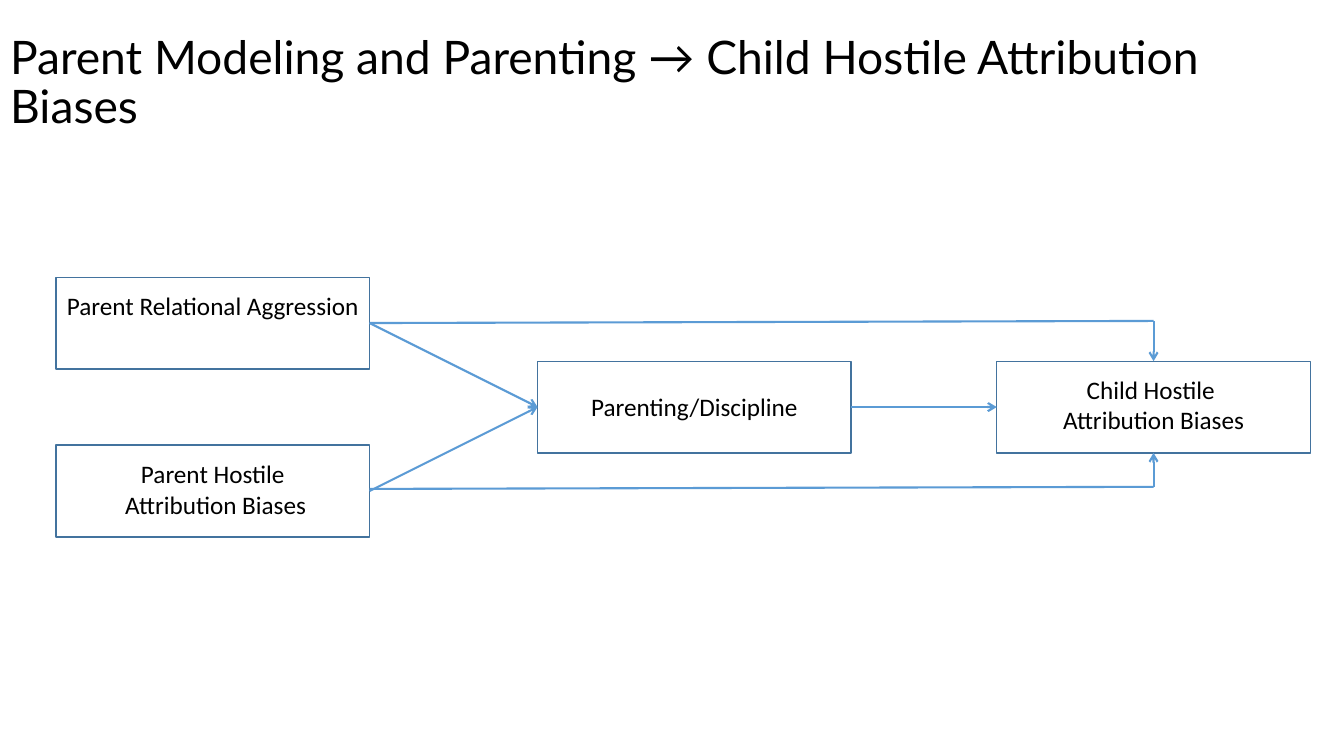
"""Build a path diagram linking parent traits to child attribution biases."""
from lxml import etree
from pptx import Presentation
from pptx.dml.color import RGBColor
from pptx.enum.shapes import MSO_CONNECTOR as Connector, MSO_SHAPE as Shape
from pptx.enum.text import MSO_ANCHOR as Anchor, MSO_AUTO_SIZE as AutoSize, PP_ALIGN as Align
from pptx.oxml.ns import qn
from pptx.util import Pt

TITLE = "Parent Modeling and Parenting → Child Hostile Attribution Biases"
BLACK, BORDER, ARROW = "000000", "43739E", "5B9BD5"
BOX_WIDTH, BOX_HEIGHT = 224, 65.5
LABEL_OVERHANG = 16

# name: (left, top, label offset from the top, label height, label lines)
BOXES = {
    "aggression": (40, 198, 6, 29, ["Parent Relational Aggression"]),
    "hostility": (40, 318, 6, 51, ["Parent Hostile", " Attribution Biases"]),
    "parenting": (384, 258, 18, 29, ["Parenting/Discipline"]),
    "child": (712, 258, 6, 51, ["Child Hostile ", "Attribution Biases"]),
}


def color(value):
    return RGBColor.from_string(value)


def style_text(frame, font, size, align):
    for para in frame.paragraphs:
        para.alignment = align
        for span in para.runs:
            span.font.name = font
            span.font.size = Pt(size)
            span.font.color.rgb = color(BLACK)


def add_title(page):
    title = page.shapes.title
    title.left, title.top, title.width, title.height = Pt(0), Pt(18), Pt(960), Pt(84)
    frame = title.text_frame
    frame.text = TITLE
    frame.word_wrap = True
    frame.auto_size = AutoSize.NONE
    frame.vertical_anchor = Anchor.MIDDLE
    frame.paragraphs[0].line_spacing = 0.9
    style_text(frame, "Lato", 33, Align.LEFT)


def add_box(page, left, top, offset, height, lines):
    label = page.shapes.add_textbox(
        Pt(left - LABEL_OVERHANG), Pt(top + offset),
        Pt(BOX_WIDTH + 2 * LABEL_OVERHANG), Pt(height))
    frame = label.text_frame
    frame.word_wrap = True
    frame.auto_size = AutoSize.SHAPE_TO_FIT_TEXT
    frame.text = "\n".join(lines)
    style_text(frame, "Calibri", 18, Align.CENTER)
    box = page.shapes.add_shape(
        Shape.RECTANGLE, Pt(left), Pt(top), Pt(BOX_WIDTH), Pt(BOX_HEIGHT))
    box.shadow.inherit = False
    box.fill.background()
    box.line.color.rgb = color(BORDER)
    box.line.width = Pt(1)


def add_path(page, start, end, arrow=True):
    points = [Pt(value) for value in (*start, *end)]
    link = page.shapes.add_connector(Connector.STRAIGHT, *points)
    link.line.color.rgb = color(ARROW)
    link.line.width = Pt(1.5)
    if arrow:
        etree.SubElement(link.line._get_or_add_ln(), qn("a:tailEnd"), type="arrow")
    etree.SubElement(link._element.spPr, qn("a:effectLst"))


def left_side(name):
    left, top = BOXES[name][:2]
    return left, top + BOX_HEIGHT / 2


def right_side(name):
    x, y = left_side(name)
    return x + BOX_WIDTH, y


def add_detour(page, start, end):
    corner = end[0], start[1] - 1.5
    add_path(page, start, corner, arrow=False)
    add_path(page, corner, end)


def main():
    deck = Presentation()
    deck.slide_width, deck.slide_height = Pt(960), Pt(540)
    page = deck.slides.add_slide(deck.slide_layouts[5])
    add_title(page)
    for box in BOXES.values():
        add_box(page, *box)

    for parent in ("aggression", "hostility"):
        add_path(page, right_side(parent), left_side("parenting"))
    add_path(page, right_side("parenting"), left_side("child"))

    child_left, child_top = BOXES["child"][:2]
    child_middle = child_left + BOX_WIDTH / 2
    add_detour(page, right_side("aggression"), (child_middle, child_top))
    x, y = right_side("hostility")
    add_detour(page, (x, y - 1.5), (child_middle, child_top + BOX_HEIGHT))
    deck.save("out.pptx")


if __name__ == "__main__":
    main()
